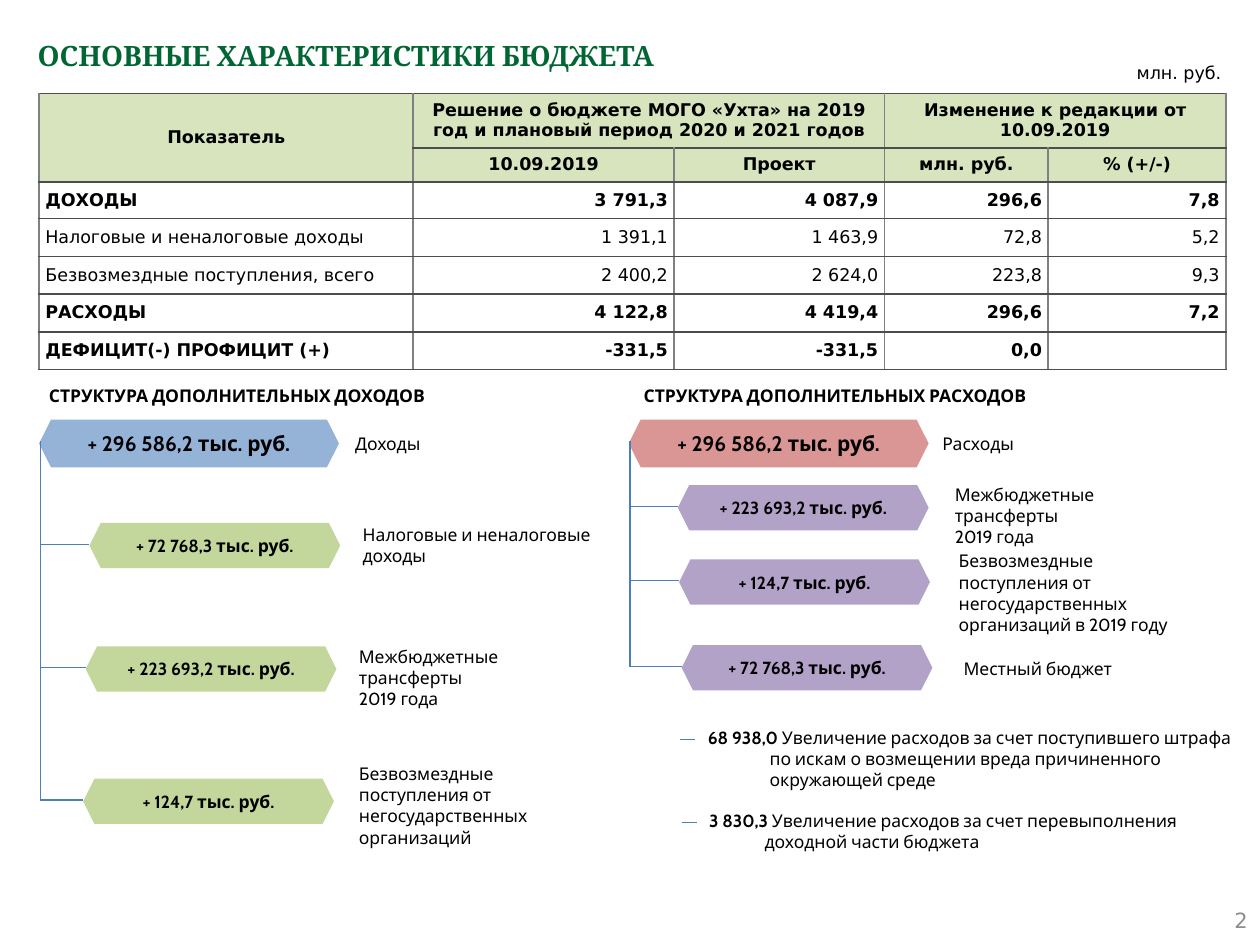
import pptx
import pptx.util
import pptx.dml.color
import pptx.enum.shapes
import pptx.enum.text
import pptx.oxml
import pptx.oxml.ns

Inches, Pt = pptx.util.Inches, pptx.util.Pt
RGBColor = pptx.dml.color.RGBColor
ALIGN, ANCHOR = pptx.enum.text.PP_ALIGN, pptx.enum.text.MSO_ANCHOR

BLACK = RGBColor(0x00, 0x00, 0x00)
TITLE_GREEN = RGBColor(0x00, 0x66, 0x33)
PAGE_GREY = RGBColor(0x8C, 0x8C, 0x8C)
HEADER_GREEN = RGBColor(0xD7, 0xE4, 0xBD)
BORDER_GREY = RGBColor(0x80, 0x80, 0x80)
BORDER_DARK = RGBColor(0x4D, 0x4D, 0x4D)
LINE_BLUE = RGBColor(0x4B, 0x7E, 0xBC)
BLUE = RGBColor(0x95, 0xB3, 0xD7)
GREEN = RGBColor(0xC3, 0xD6, 0x9B)
RED = RGBColor(0xD9, 0x96, 0x94)
PURPLE = RGBColor(0xB3, 0xA2, 0xC7)

BUDGET = [
    ("ДОХОДЫ", "3 791,3", "4 087,9", "296,6", "7,8"),
    ("Налоговые и неналоговые доходы", "1 391,1", "1 463,9", "72,8", "5,2"),
    ("Безвозмездные поступления, всего", "2 400,2", "2 624,0", "223,8", "9,3"),
    ("РАСХОДЫ", "4 122,8", "4 419,4", "296,6", "7,2"),
    ("ДЕФИЦИТ(-) ПРОФИЦИТ (+)", "-331,5", "-331,5", "0,0", ""),
]


def style(para, size=10, name="Cabin", color=BLACK, bold=False, align=ALIGN.LEFT):
    """Set the font and alignment of one paragraph."""
    para.font.size, para.font.name, para.font.bold = Pt(size), name, bold
    para.font.color.rgb = color
    para.alignment = align


def add_text(page, box, lines, wrap=True, anchor=ANCHOR.TOP, **look):
    """Add a text box with one paragraph for each line."""
    frame = page.shapes.add_textbox(*map(Inches, box)).text_frame
    frame.word_wrap, frame.vertical_anchor = wrap, anchor
    frame.text = "\n".join(lines)
    for para in frame.paragraphs:
        style(para, **look)
    return frame


def add_line(page, x1, y1, x2, y2):
    """Add a thin blue straight line."""
    line = page.shapes.add_connector(
        pptx.enum.shapes.MSO_CONNECTOR.STRAIGHT, *map(Inches, (x1, y1, x2, y2)))
    line.line.color.rgb, line.line.width = LINE_BLUE, Pt(0.75)
    line._element.spPr.append(pptx.oxml.parse_xml(
        f'<a:effectLst {pptx.oxml.ns.nsdecls("a")}/>'))


def add_hexagon(page, box, text, color, size=10):
    """Add a filled hexagon holding a bold amount."""
    shape = page.shapes.add_shape(
        pptx.enum.shapes.MSO_SHAPE.HEXAGON, *map(Inches, box))
    shape.shadow.inherit = False
    shape.fill.solid()
    shape.fill.fore_color.rgb = color
    shape.line.fill.background()
    frame = shape.text_frame
    frame.word_wrap, frame.vertical_anchor = False, ANCHOR.MIDDLE
    frame.margin_top = frame.margin_bottom = 0
    frame.text = text
    style(frame.paragraphs[0], size, bold=True, align=ALIGN.CENTER)


def set_borders(cell):
    """Draw grey vertical and dark horizontal borders around a cell."""
    props = cell._tc.get_or_add_tcPr()
    sides = zip(("lnL", "lnR", "lnT", "lnB"), [BORDER_GREY] * 2 + [BORDER_DARK] * 2)
    for index, (side, color) in enumerate(sides):
        props.insert(index, pptx.oxml.parse_xml(
            f'<a:{side} {pptx.oxml.ns.nsdecls("a")} w="12700"><a:solidFill>'
            f'<a:srgbClr val="{color}"/></a:solidFill></a:{side}>'))


def add_budget_table(page, box):
    """Add the table of budget figures with its two-row header."""
    header = [
        ("Показатель", "Решение о бюджете МОГО «Ухта» на 2019 год и плановый "
         "период 2020 и 2021 годов", "", "Изменение к редакции от 10.09.2019", ""),
        ("", "10.09.2019", "Проект", "млн. руб.", "% (+/-)"),
    ]
    rows = header + BUDGET
    frame = page.shapes.add_table(len(rows), 5, *map(Inches, box))
    table = frame.table
    for column, width in zip(table.columns, (2.97, 2.07, 1.67, 1.3, 1.41)):
        column.width = Inches(width)
    for row, height in zip(table.rows, (0.42, 0.27, 0.29, 0.3, 0.3, 0.3, 0.3)):
        row.height = Inches(height)
    for r, values in enumerate(rows):
        is_header = r < len(header)
        for c, value in enumerate(values):
            cell = table.cell(r, c)
            cell.text = value
            cell.vertical_anchor = ANCHOR.MIDDLE
            cell.margin_left = cell.margin_right = Inches(0.05)
            cell.margin_top = cell.margin_bottom = Inches(0.05)
            if is_header:
                cell.fill.solid()
                cell.fill.fore_color.rgb = HEADER_GREEN
            else:
                cell.fill.background()
            align = ALIGN.CENTER if is_header else ALIGN.RIGHT if c else ALIGN.LEFT
            bold = is_header or values[0].isupper()
            style(cell.text_frame.paragraphs[0], name="DejaVu Sans", bold=bold, align=align)
            set_borders(cell)
    for first, last in (((0, 0), (1, 0)), ((0, 1), (0, 2)), ((0, 3), (0, 4))):
        table.cell(*first).merge(table.cell(*last))


def add_structure(page, box, heading, heading_dx, total, color, branch_color, branches):
    """Add a heading, a total and its branches on a vertical trunk."""
    left, top, width, height = box
    label, label_dx = total
    add_text(page, (left + heading_dx, top, 3.39, 0.27), [heading], wrap=False, bold=True)
    add_hexagon(page, (left, top + 0.32, 2.38, 0.38), "+ 296 586,2 тыс. руб.", color, 12)
    add_text(page, (left + label_dx, top + 0.38, 2.08, 0.27), [label])
    trunk = left + 0.01
    add_line(page, trunk, top + 0.49, trunk, top + height)
    for dx, dy, amount, lines, text_dx, text_dy, text_width in branches:
        x, y = left + dx, top + dy
        add_line(page, trunk, y + 0.17, x, y + 0.17)
        add_hexagon(page, (x, y, 1.99, 0.36), amount, branch_color)
        text_box = (left + text_dx, top + text_dy, text_width, 0.17 * len(lines) + 0.1)
        add_text(page, text_box, lines)


def add_detail(page, box, amount, lines, indent):
    """Add a dashed detail whose first line opens with a bold amount."""
    left, top = box[:2]
    add_line(page, left - 0.12, top + 0.15, left, top + 0.15)
    frame = add_text(page, box, ["", *lines[1:]])
    first, *others = frame.paragraphs
    for text, bold in ((amount + " ", True), (lines[0], False)):
        span = first.add_run()
        span.text, span.font.bold = text, bold
    for para in others:
        para._p.get_or_add_pPr().set("marL", str(Inches(indent)))


def main():
    """Build the budget slide."""
    deck = pptx.Presentation()
    deck.slide_width, deck.slide_height = Inches(10), Inches(7.5)
    page = deck.slides.add_slide(deck.slide_layouts[6])
    title = add_text(page, (0.2, 0.2, 9.61, 0.79), ["ОСНОВНЫЕ ХАРАКТЕРИСТИКИ БЮДЖЕТА"],
                     size=16, name="Cambria", color=TITLE_GREEN, bold=True)
    title.paragraphs[0].line_spacing = 1.2
    add_text(page, (8.55, 0.47, 1.24, 0.21), ["млн. руб."], anchor=ANCHOR.MIDDLE,
             name="DejaVu Sans", align=ALIGN.RIGHT)
    add_budget_table(page, (0.31, 0.74, 9.42, 2.18))
    transfers = ["Межбюджетные трансферты", "2019 года"]
    add_structure(
        page, (0.31, 3.01, 4.59, 3.34), "СТРУКТУРА ДОПОЛНИТЕЛЬНЫХ ДОХОДОВ", -0.02,
        ("Доходы", 2.41), BLUE, GREEN, [
            (0.4, 1.14, "+ 72 768,3 тыс. руб.",
             ["Налоговые и неналоговые", "доходы"], 2.47, 1.1, 2.05),
            (0.37, 2.12, "+ 223 693,2 тыс. руб.", transfers, 2.44, 2.07, 2.05),
            (0.35, 3.17, "+ 124,7 тыс. руб.",
             ["Безвозмездные поступления от негосударственных организаций"],
             2.44, 3, 2.15)])
    add_structure(
        page, (4.99, 3.01, 5.01, 2.28), "СТРУКТУРА ДОПОЛНИТЕЛЬНЫХ РАСХОДОВ", 0.02,
        ("Расходы", 2.39), RED, PURPLE, [
            (0.39, 0.84, "+ 223 693,2 тыс. руб.", transfers, 2.49, 0.78, 2.15),
            (0.4, 1.43, "+ 124,7 тыс. руб.",
             ["Безвозмездные поступления от негосударственных организаций в 2019 году"],
             2.52, 1.31, 2.15),
            (0.42, 2.11, "+ 72 768,3 тыс. руб.", ["Местный бюджет"], 2.56, 2.16, 2.45)])
    add_detail(page, (5.52, 5.72, 4.49, 0.61), "68 938,0",
               ["Увеличение расходов за счет поступившего штрафа",
                "по искам о возмещении вреда причиненного", "окружающей среде"], 0.49)
    add_detail(page, (5.53, 6.38, 4.49, 0.44), "3 830,3",
               ["Увеличение расходов за счет перевыполнения",
                "доходной части бюджета"], 0.44)
    add_text(page, (7.67, 7.1, 2.33, 0.4), ["2"], anchor=ANCHOR.MIDDLE, size=12,
             name="DejaVu Sans", color=PAGE_GREY, align=ALIGN.RIGHT)
    deck.save("out.pptx")


if __name__ == "__main__":
    main()
